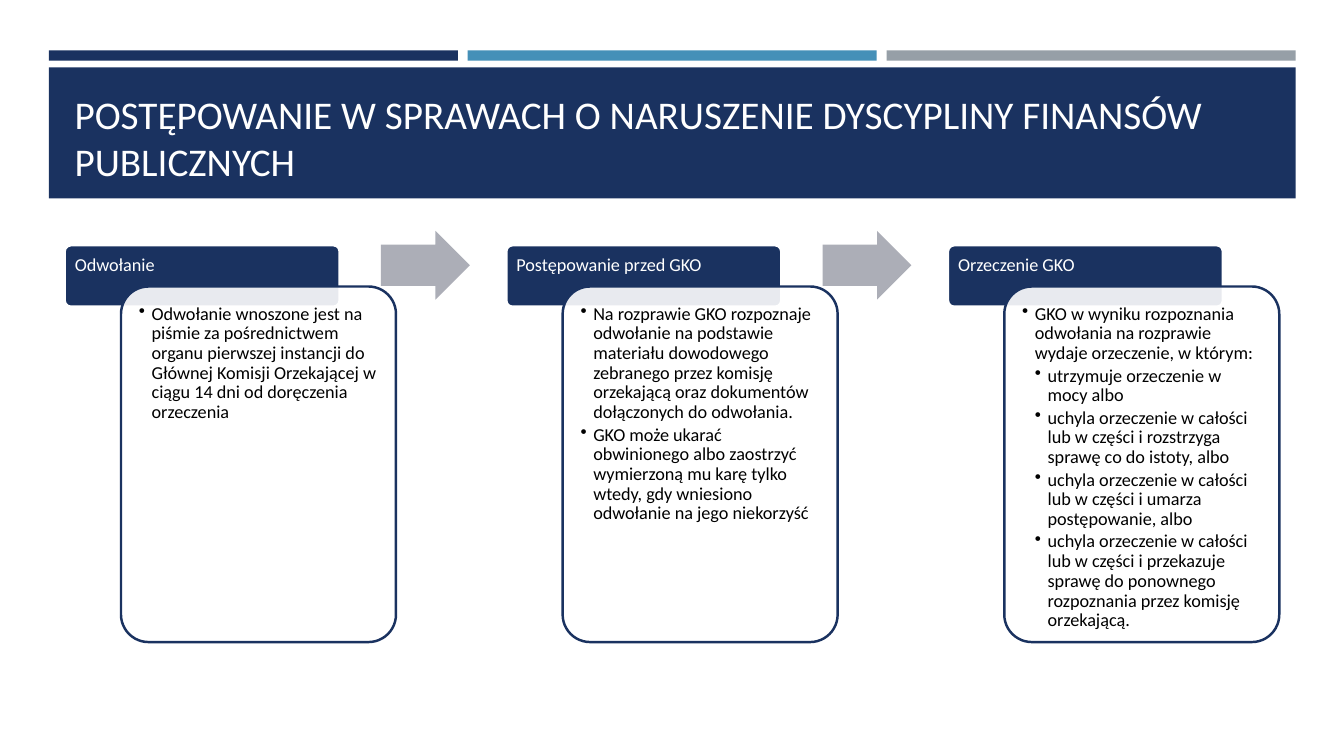
from lxml import etree
from pptx import Presentation
from pptx.dml.color import RGBColor
from pptx.enum.shapes import MSO_SHAPE
from pptx.enum.text import MSO_ANCHOR, MSO_AUTO_SIZE, PP_ALIGN
from pptx.oxml.ns import qn
from pptx.util import Cm, Pt

RECT = MSO_SHAPE.RECTANGLE
ROUNDED = MSO_SHAPE.ROUNDED_RECTANGLE
ARROW = MSO_SHAPE.RIGHT_ARROW
LEFT = PP_ALIGN.LEFT
TOP, BOTTOM = MSO_ANCHOR.TOP, MSO_ANCHOR.BOTTOM
NO_AUTOFIT = MSO_AUTO_SIZE.NONE

COLORS = {"navy": "1A3260", "blue": "4590B8", "gray": "969FA7",
          "arrow": "ACAEB7", "white": "FFFFFF", "black": "000000"}
FONT = "Calibri"
TITLE = "POSTĘPOWANIE W SPRAWACH O NARUSZENIE DYSCYPLINY FINANSÓW PUBLICZNYCH"

# Each stage: heading, then (level, text) points
STAGES = [
    ("Odwołanie", [
        (1, "Odwołanie wnoszone jest na piśmie za pośrednictwem organu pierwszej "
            "instancji do Głównej Komisji Orzekającej w ciągu 14 dni od doręczenia "
            "orzeczenia"),
    ]),
    ("Postępowanie przed GKO", [
        (1, "Na rozprawie GKO rozpoznaje odwołanie na podstawie materiału dowodowego "
            "zebranego przez komisję orzekającą oraz dokumentów dołączonych do "
            "odwołania."),
        (1, "GKO może ukarać obwinionego albo zaostrzyć wymierzoną mu karę tylko "
            "wtedy, gdy wniesiono odwołanie na jego niekorzyść"),
    ]),
    ("Orzeczenie GKO", [
        (1, "GKO w wyniku rozpoznania odwołania na rozprawie wydaje orzeczenie, "
            "w którym:"),
        (2, "utrzymuje orzeczenie w mocy albo"),
        (2, "uchyla orzeczenie w całości lub w części i rozstrzyga sprawę co do "
            "istoty, albo"),
        (2, "uchyla orzeczenie w całości lub w części i umarza postępowanie, albo"),
        (2, "uchyla orzeczenie w całości lub w części i przekazuje sprawę do "
            "ponownego rozpoznania przez komisję orzekającą."),
    ]),
]


def rgb(name):
    return RGBColor.from_string(COLORS[name])


def add_block(slide, preset, box, fill, line=None):
    """Add a flat preset shape; box is left, top, width, height in cm."""
    block = slide.shapes.add_shape(preset, *map(Cm, box))
    block.shadow.inherit = False
    block.fill.solid()
    block.fill.fore_color.rgb = rgb(fill)
    if line:
        block.line.color.rgb = rgb(line)
        block.line.width = Pt(1.75)
    else:
        block.line.fill.background()
    return block


def set_alpha(block, percent):
    color = block.fill._xPr.find(qn("a:solidFill"))[0]
    etree.SubElement(color, qn("a:alpha"), val=str(percent * 1000))


def set_frame(frame, anchor, inset):
    frame.word_wrap = True
    frame.auto_size = NO_AUTOFIT
    frame.vertical_anchor = anchor
    frame.margin_left = frame.margin_right = Cm(inset)
    frame.margin_top = frame.margin_bottom = Cm(inset)


def style_paragraph(paragraph, size, color):
    paragraph.alignment = LEFT
    paragraph.font.name = FONT
    paragraph.font.size = Pt(size)
    paragraph.font.color.rgb = rgb(color)


def add_bullet(paragraph, level):
    paragraph.level = level
    properties = paragraph._p.get_or_add_pPr()
    properties.set("marL", str(Cm(0.32 * level)))
    properties.set("indent", str(-Cm(0.32)))
    bullet = etree.Element(qn("a:buChar"), char="•")
    defaults = properties.find(qn("a:defRPr"))
    defaults.addprevious(bullet)


def add_title_band(slide, box):
    left, top, width, height = box
    gap = 0.25
    bar_width = (width - 2 * gap) / 3
    for i, color in enumerate(("navy", "blue", "gray")):
        bar_left = left + i * (bar_width + gap)
        add_block(slide, RECT, (bar_left, top, bar_width, 0.26), color)
    add_block(slide, RECT, (left, top + 0.43, width, height - 0.43), "navy")

    title = slide.shapes.title
    title.left, title.top = Cm(left + 0.4), Cm(top + 0.69)
    title.width, title.height = Cm(width - 0.8), Cm(height - 0.92)
    title.text_frame.text = TITLE
    set_frame(title.text_frame, BOTTOM, 0.25)
    title.text_frame.margin_top = title.text_frame.margin_bottom = Cm(0.13)
    style_paragraph(title.text_frame.paragraphs[0], 28, "white")
    # The placeholder comes first in the stack, so lift it above the band
    title.element.getparent().append(title.element)


def add_stage(slide, box, heading, points):
    """Draw a heading tab with its overlapping card of bullets."""
    left, top, width, height = box
    part_width = width - 1.42
    tab = add_block(slide, ROUNDED, (left, top, part_width, 1.55), "navy", "white")
    tab.adjustments[0] = 0.1
    set_frame(tab.text_frame, TOP, 0.21)
    tab.text_frame.text = heading
    style_paragraph(tab.text_frame.paragraphs[0], 13, "white")
    tab.text_frame.paragraphs[0].line_spacing = 0.9

    card = add_block(slide, ROUNDED,
                     (left + 1.42, top + 1.04, part_width, height - 1.04),
                     "white", "navy")
    card.adjustments[0] = 0.1
    set_alpha(card, 90)
    set_frame(card.text_frame, TOP, 0.25)
    card.text_frame.text = "\n".join(text for _, text in points)
    for paragraph, (level, _) in zip(card.text_frame.paragraphs, points):
        style_paragraph(paragraph, 13, "black")
        paragraph.line_spacing = 0.9
        paragraph.space_after = Pt(2)
        add_bullet(paragraph, level)


def add_process(slide, box):
    left, top, width, height = box
    stage_width = 8.35
    pitch = (width - stage_width) / (len(STAGES) - 1)
    for i, (heading, points) in enumerate(STAGES):
        stage_left = left + i * pitch
        add_stage(slide, (stage_left, top, stage_width, height), heading, points)
        if i < len(STAGES) - 1:
            arrow = add_block(slide, ARROW,
                              (stage_left + 7.97, top - 0.36, 2.24, 1.73), "arrow")
            arrow.adjustments[0] = 0.6
            arrow.adjustments[1] = 0.5


def main():
    presentation = Presentation()
    presentation.slide_width, presentation.slide_height = Cm(33.87), Cm(19.05)
    title_only = presentation.slide_layouts[5]
    slide = presentation.slides.add_slide(title_only)
    add_title_band(slide, (1.23, 1.27, 31.42, 3.73))
    add_process(slide, (1.63, 6.18, 30.61, 10))
    presentation.save("out.pptx")


if __name__ == "__main__":
    main()
